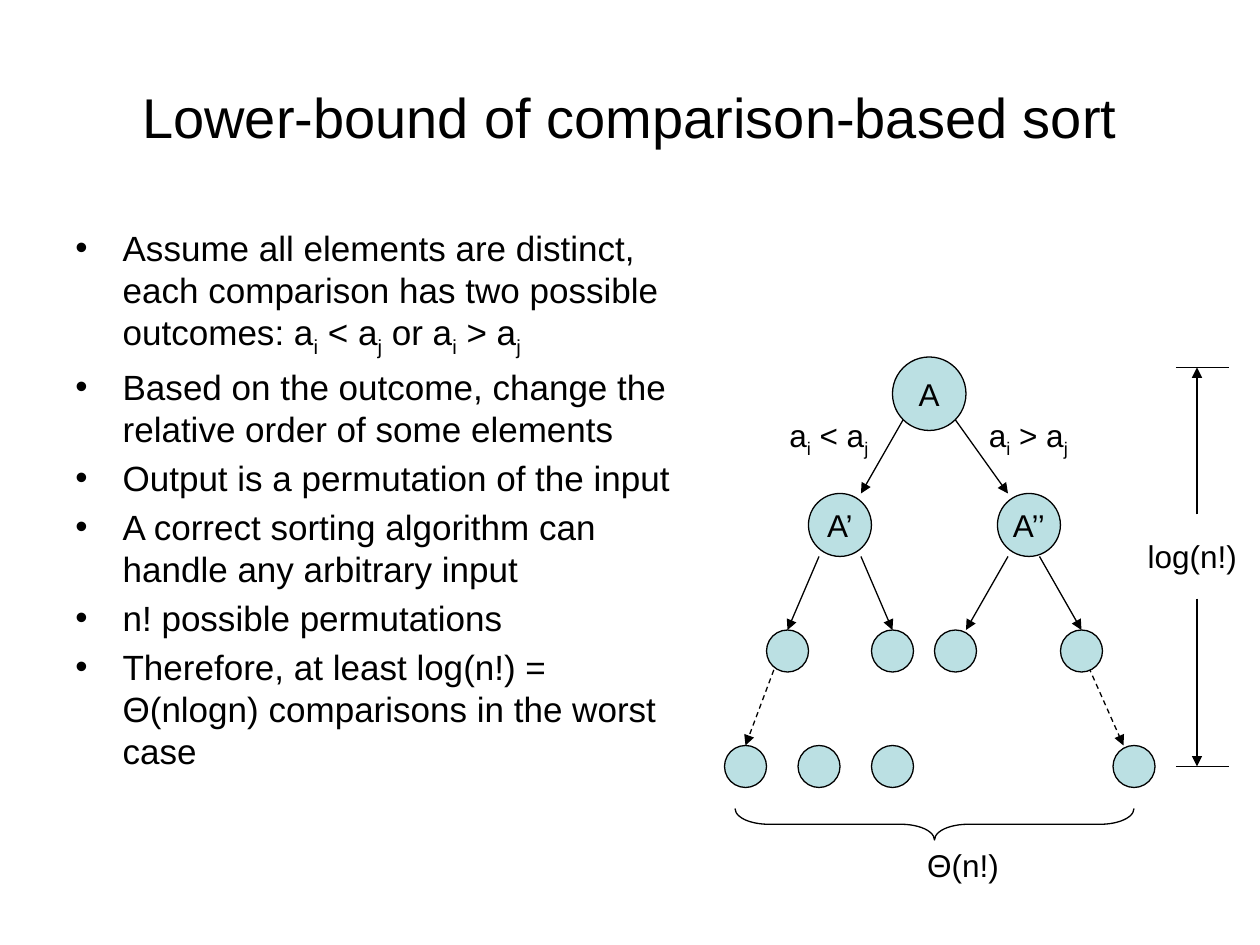
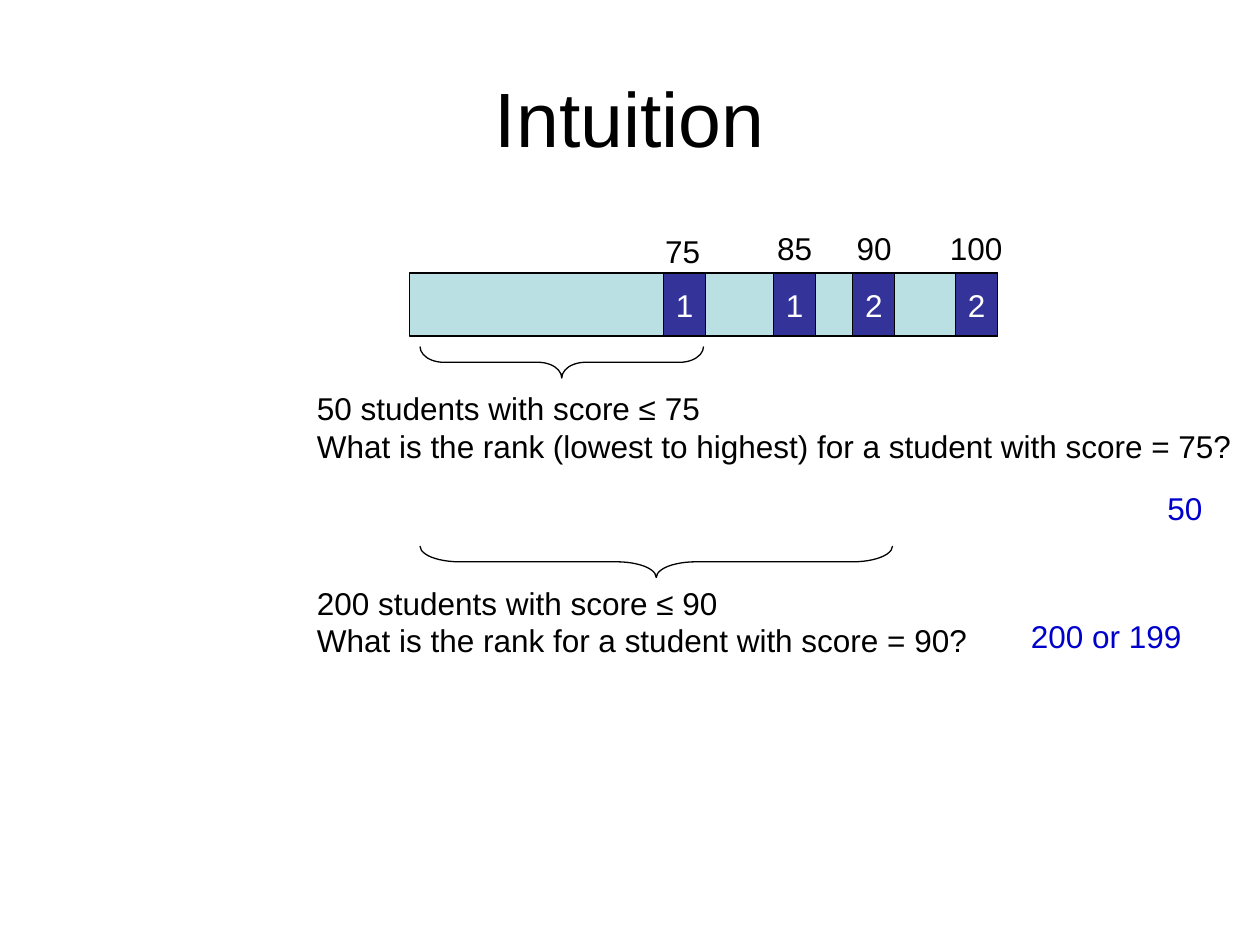
"""Build two slides: the comparison-sort lower bound and the intuition behind ranks."""
from lxml.etree import SubElement
from pptx import Presentation
from pptx.dml.color import RGBColor
from pptx.enum.dml import MSO_LINE
from pptx.enum.shapes import MSO_CONNECTOR, MSO_SHAPE
from pptx.enum.text import MSO_ANCHOR, PP_ALIGN
from pptx.oxml.ns import qn
from pptx.util import Pt

FONT = "Arial"
BLACK, WHITE, PALE_TEAL, INDIGO, BLUE = "000000", "FFFFFF", "BBE0E3", "333399", "0000CC"
LINE_WIDTH = Pt(0.75)
TEXT_HEIGHT = 28.8
color_of = RGBColor.from_string


def write(shape, lines, size=18, color=BLACK, centered=False, wrap=False):
    """Fill a shape with lines; text between underscores becomes a subscript."""
    frame = shape.text_frame
    frame.word_wrap = wrap
    frame.vertical_anchor = MSO_ANCHOR.MIDDLE if centered else MSO_ANCHOR.TOP
    for index, line in enumerate(lines):
        paragraph = frame.add_paragraph() if index else frame.paragraphs[0]
        paragraph.alignment = PP_ALIGN.CENTER if centered else PP_ALIGN.LEFT
        for part, text in enumerate(line.split("_")):
            if not text:
                continue
            run = paragraph.add_run()
            run.text = text
            run.font.name = FONT
            run.font.size = Pt(size)
            run.font.color.rgb = color_of(color)
            if part % 2:
                run.font._element.set("baseline", "-25000")


def draw(slide, preset, left, top, width, height, fill=None):
    """Add a black-outlined preset shape, filled only if a fill is given."""
    shape = slide.shapes.add_shape(preset, Pt(left), Pt(top), Pt(width), Pt(height))
    shape.shadow.inherit = False
    shape.line.color.rgb = color_of(BLACK)
    shape.line.width = LINE_WIDTH
    if fill:
        shape.fill.solid()
        shape.fill.fore_color.rgb = color_of(fill)
    else:
        shape.fill.background()
    return shape


presentation = Presentation()
presentation.slide_width, presentation.slide_height = Pt(720), Pt(540)
blank_layout = presentation.slide_layouts[6]
tree_slide = presentation.slides.add_slide(blank_layout)
rank_slide = presentation.slides.add_slide(blank_layout)

titles = [
    (tree_slide, "Lower-bound of comparison-based sort", 32),
    (rank_slide, "Intuition", 44),
]
for slide, title, size in titles:
    title_box = slide.shapes.add_textbox(Pt(36), Pt(21.6), Pt(648), Pt(90))
    write(title_box, [title], size, centered=True, wrap=True)

bullets = [
    "Assume all elements are distinct, each comparison has two possible outcomes: "
    "a_i_ < a_j_ or a_i_ > a_j_",
    "Based on the outcome, change the relative order of some elements",
    "Output is a permutation of the input",
    "A correct sorting algorithm can handle any arbitrary input",
    "n! possible permutations",
    "Therefore, at least log(n!) = Θ(nlogn) comparisons in the worst case",
]
bullet_box = tree_slide.shapes.add_textbox(Pt(36), Pt(126), Pt(360), Pt(396))
write(bullet_box, bullets, 20, wrap=True)
for paragraph in bullet_box.text_frame.paragraphs:
    paragraph.space_before = Pt(4)
    properties = paragraph._p.get_or_add_pPr()
    properties.set("marL", str(Pt(27)))
    properties.set("indent", str(-Pt(27)))
    SubElement(properties, qn("a:buFont"), typeface=FONT)
    SubElement(properties, qn("a:buChar"), char="•")

solid_arrows = [
    (516, 240, 492, 282), (546, 240, 576, 282),
    (468, 318, 450, 360), (492, 318, 510, 360),
    (576, 318, 552, 360), (594, 318, 618, 360),
    (684, 294, 684, 210), (684, 342, 684, 438),
]
dashed_arrows = [(444, 378, 426, 426), (618, 372, 642, 426)]
height_ticks = [(672, 210, 702, 210), (672, 438, 702, 438)]
for ends in solid_arrows + dashed_arrows + height_ticks:
    connector = tree_slide.shapes.add_connector(MSO_CONNECTOR.STRAIGHT, *map(Pt, ends))
    connector.line.color.rgb = color_of(BLACK)
    connector.line.width = LINE_WIDTH
    if ends in dashed_arrows:
        connector.line.dash_style = MSO_LINE.DASH
    if ends not in height_ticks:
        SubElement(connector.line._get_or_add_ln(), qn("a:tailEnd"), type="triangle")
    SubElement(connector._element.spPr, qn("a:effectLst"))

tree_levels = [
    (204, 42, [(510, "A")]),
    (282, 36, [(462, "A’"), (570, "A’’")]),
    (360, 24, [(438, ""), (498, ""), (534, ""), (606, "")]),
    (426, 24, [(414, ""), (456, ""), (498, ""), (636, "")]),
]
for top, diameter, nodes in tree_levels:
    for left, name in nodes:
        node = draw(tree_slide, MSO_SHAPE.OVAL, left, top, diameter, diameter, PALE_TEAL)
        write(node, [name], centered=True)

score_bar = draw(rank_slide, MSO_SHAPE.RECTANGLE, 234, 156, 336, 36, PALE_TEAL)
for left, count in [(379.2, "1"), (442, "1"), (487.3, "2"), (546, "2")]:
    cell = draw(rank_slide, MSO_SHAPE.RECTANGLE, left, 156, 24, 36, INDIGO)
    write(cell, [count], color=WHITE, centered=True)

braces = [
    (tree_slide, 420, 462, 228, 1.06),
    (rank_slide, 240, 198, 162, 0.75),
    (rank_slide, 240, 312, 270, 1.25),
]
depth = 18
for slide, left, top, span, curl in braces:
    shift = (span - depth) / 2
    brace = draw(slide, MSO_SHAPE.LEFT_BRACE, left + shift, top - shift, depth, span)
    brace.rotation = 270
    brace.adjustments[0] = curl

labels = [
    (tree_slide, 444, 234, 60.5, ["a_i_ < a_j_"], BLACK),
    (tree_slide, 558, 234, 60.5, ["a_i_ > a_j_"], BLACK),
    (tree_slide, 522.7, 480.2, 55.4, ["Θ(n!)"], BLACK),
    (tree_slide, 648.7, 303.1, 65.5, ["log(n!)"], BLACK),
    (rank_slide, 373, 128.9, 34.6, ["75"], BLACK),
    (rank_slide, 437, 127.4, 34.6, ["85"], BLACK),
    (rank_slide, 482.4, 127.4, 34.6, ["90"], BLACK),
    (rank_slide, 535.7, 127.4, 44.6, ["100"], BLACK),
    (rank_slide, 174, 219, 537, [
        "50 students with score ≤ 75",
        "What is the rank (lowest to highest) for a student with score = 75?",
    ], BLACK),
    (rank_slide, 174, 330, 386, [
        "200 students with score ≤ 90",
        "What is the rank for a student with score = 90?",
    ], BLACK),
    (rank_slide, 660, 276, 34.6, ["50"], BLUE),
    (rank_slide, 582, 349.2, 100.8, ["200 or 199"], BLUE),
]
for slide, left, top, width, lines, color in labels:
    height = TEXT_HEIGHT + 21.6 * (len(lines) - 1)
    label = slide.shapes.add_textbox(Pt(left), Pt(top), Pt(width), Pt(height))
    write(label, lines, color=color)

presentation.save("out.pptx")
